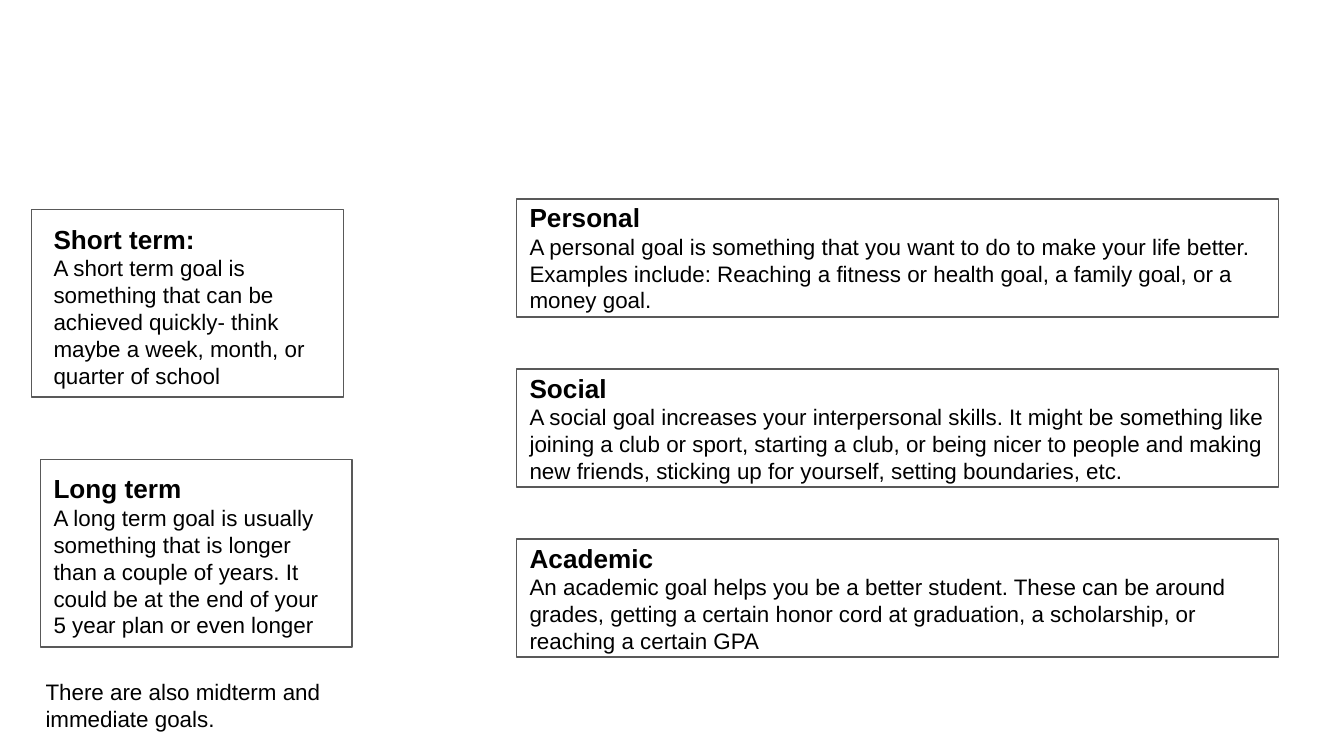
from pptx import Presentation
from pptx.dml.color import RGBColor
from pptx.enum.shapes import MSO_SHAPE
from pptx.enum.text import MSO_ANCHOR, PP_ALIGN
from pptx.util import Inches, Pt

RECTANGLE = MSO_SHAPE.RECTANGLE
TOP, MIDDLE = MSO_ANCHOR.TOP, MSO_ANCHOR.MIDDLE
LEFT = PP_ALIGN.LEFT
COLORS = {"paper": "FFFFFF", "border": "595959", "text": "000000"}
FONT = "Arial"
WIDTH = Inches(10)
HEIGHT = WIDTH * 9 // 16
COLUMN, ROW = WIDTH / 100, HEIGHT / 100  # grid of 100 columns by 100 rows

TERMS = [
    ("Short term:", "A short term goal is something that can be achieved quickly- "
     "think maybe a week, month, or quarter of school"),
    ("Long term", "A long term goal is usually something that is longer than a couple "
     "of years. It could be at the end of your 5 year plan or even longer"),
]
PERSONAL = (
    "Personal",
    "A personal goal is something that you want to do to make your life better. "
    "Examples include: Reaching a fitness or health goal, a family goal, or a",
    "money goal.",
)
AREAS = [
    ("Social", "A social goal increases your interpersonal skills. It might be "
     "something like joining a club or sport, starting a club, or being nicer to "
     "people and making new friends, sticking up for yourself, setting boundaries, etc."),
    ("Academic", "An academic goal helps you be a better student. These can be around "
     "grades, getting a certain honor cord at graduation, a scholarship, or reaching "
     "a certain GPA"),
]


def color(name):
    return RGBColor.from_string(COLORS[name])


def to_emu(box):
    left, top, width, height = box
    return [round(n) for n in (left * COLUMN, top * ROW, width * COLUMN, height * ROW)]


def add_frame(slide, box):
    frame = slide.shapes.add_shape(RECTANGLE, *to_emu(box))
    frame.shadow.inherit = False
    frame.fill.solid()
    frame.fill.fore_color.rgb = color("paper")
    frame.line.color.rgb = color("border")
    frame.line.width = Pt(0.75)
    return frame


def write(holder, lines, anchor=TOP, padding=0.1, headed=True):
    body = holder.text_frame
    body.word_wrap = True
    body.vertical_anchor = anchor
    body.margin_left = body.margin_right = Inches(0.1)
    body.margin_top = body.margin_bottom = Inches(padding)
    body.text = "\n".join(lines)
    for index, paragraph in enumerate(body.paragraphs):
        heading = headed and index == 0
        paragraph.alignment = LEFT
        for run in paragraph.runs:
            run.font.name = FONT
            run.font.size = Pt(14 if heading else 12)
            run.font.bold = heading
            run.font.color.rgb = color("text")


def add_text(slide, box, lines, headed=True):
    write(slide.shapes.add_textbox(*to_emu(box)), lines, headed=headed)


def add_terms(slide, left, top, width, height):
    """Two framed time spans; the first frame sits slightly further left."""
    step, shift = 33.05, 0.65
    for index, lines in enumerate(TERMS):
        y = top + index * step
        add_frame(slide, (left + index * shift, y, width, height))
        add_text(slide, (left + shift, y, width - 0.7, height + 0.9), lines)


def add_areas(slide, left, top, width, height):
    """Three evenly spaced frames, one for each area of life."""
    step = 22.5
    # The personal text lies over its frame and reaches past its right edge
    add_frame(slide, (left, top, width, height))
    add_text(slide, (left, top - 1.45, width + 4.6, height + 2.85), PERSONAL)
    # The other areas hold their own text
    for index, lines in enumerate(AREAS, start=1):
        frame = add_frame(slide, (left, top + index * step, width, height))
        write(frame, lines, MIDDLE, padding=0)


def main():
    deck = Presentation()
    deck.slide_width, deck.slide_height = WIDTH, HEIGHT
    slide = deck.slides.add_slide(deck.slide_layouts[6])
    add_terms(slide, 2.35, 27.7, 23.2, 24.85)
    add_areas(slide, 38.42, 26.32, 56.7, 15.6)
    # Closing remark under the time spans
    add_text(slide, (2.4, 87.9, 24.9, 10.8),
             ["There are also midterm and immediate goals."], headed=False)
    deck.save("out.pptx")


if __name__ == "__main__":
    main()
